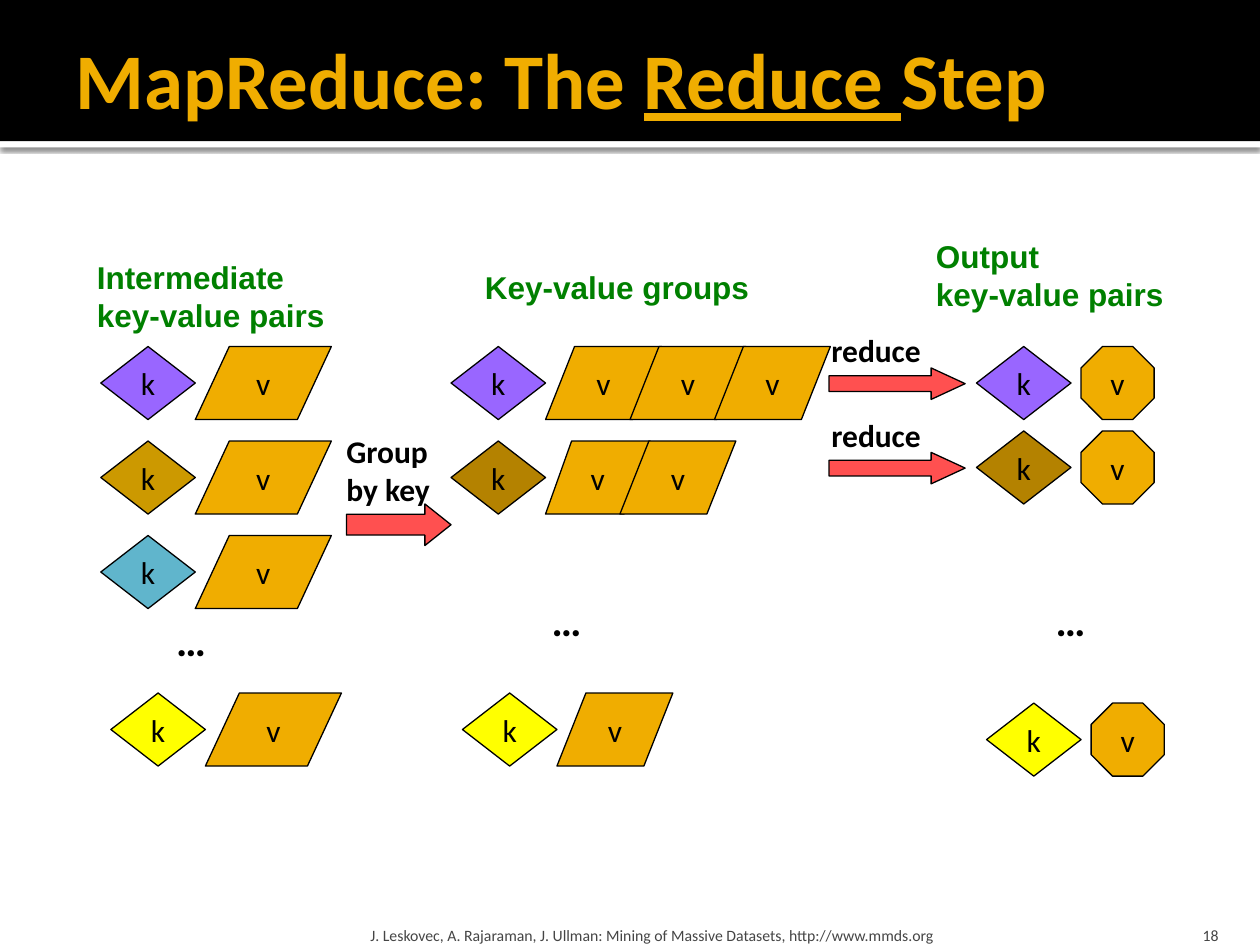
from dataclasses import dataclass

from lxml import etree
from pptx import Presentation
from pptx.dml.color import RGBColor
from pptx.enum.shapes import MSO_SHAPE as SHAPE
from pptx.enum.text import MSO_ANCHOR as ANCHOR, MSO_AUTO_SIZE as AUTO, PP_ALIGN as ALIGN
from pptx.oxml.ns import qn
from pptx.util import Inches, Pt


@dataclass(frozen=True)
class Theme:
    black: str = "000000"
    white: str = "FFFFFF"
    gold: str = "F0AD00"
    green: str = "008000"
    red: str = "FF5050"
    grey: str = "454545"
    purple: str = "9966FF"
    ochre: str = "CC9900"
    brown: str = "B48200"
    blue: str = "60B5CC"
    yellow: str = "FFFF00"
    body: str = "Calibri"
    heading: str = "Arial"
    title_size: float = 45
    text_size: float = 18
    dots_size: float = 24
    footer_size: float = 9


T = Theme()
KEY_W, SHAPE_H = 0.75, 0.58
SLANT = 0.25  # slant or arrowhead length as a share of the shape's width
LABEL = dict(size=T.text_size, name=T.body, color=T.black, bold=True)
HEADING = dict(LABEL, name=T.heading, color=T.green)
DOTS = dict(LABEL, size=T.dots_size)
LETTER = dict(LABEL, bold=False)
FOOTER = dict(LETTER, size=T.footer_size, color=T.grey)
TITLE = dict(LABEL, size=T.title_size, color=T.gold)


def add_run(p, text, size, color, **font):
    r = p.add_run()
    r.text = text
    r.font.size = Pt(size)
    r.font.color.rgb = RGBColor.from_string(color)
    for name, value in font.items():
        setattr(r.font, name, value)


def set_frame(tf, insets=(0.1, 0.05, 0.1, 0.05), **formats):
    for side, inset in zip(("left", "top", "right", "bottom"), insets):
        setattr(tf, f"margin_{side}", Inches(inset))
    for name, value in formats.items():
        setattr(tf, name, value)


def add_text(s, box, lines, font, align=ALIGN.LEFT, **frame):
    tf = s.shapes.add_textbox(*map(Inches, box)).text_frame
    set_frame(tf, **{"word_wrap": False, "auto_size": AUTO.SHAPE_TO_FIT_TEXT, **frame})
    for i, line in enumerate(lines):
        p = tf.paragraphs[0] if i == 0 else tf.add_paragraph()
        p.alignment = align
        add_run(p, line, **font)


def add_figure(s, kind, box, fill, letter=None, outlined=True):
    sp = s.shapes.add_shape(kind, *map(Inches, box))
    sp.shadow.inherit = False
    sp.fill.solid()
    sp.fill.fore_color.rgb = RGBColor.from_string(fill)
    if outlined:
        sp.line.color.rgb = RGBColor.from_string(T.black)
        sp.line.width = Pt(0.75)
    else:
        sp.line.fill.background()
    if letter:
        set_frame(sp.text_frame, word_wrap=False, vertical_anchor=ANCHOR.MIDDLE)
        p = sp.text_frame.paragraphs[0]
        p.alignment = ALIGN.CENTER
        add_run(p, letter, **LETTER)
    return sp


def add_arrow(s, box):
    sp = add_figure(s, SHAPE.RIGHT_ARROW, box, T.red)
    sp.adjustments[0] = 0.5
    sp.adjustments[1] = SLANT * box[2] / box[3]


def add_key(s, x, y, fill):
    add_figure(s, SHAPE.DIAMOND, (x, y, KEY_W, SHAPE_H), fill, "k")


def key_with_values(s, x, y, fill, values):
    """A key followed by parallelograms, each given as (offset, width)."""
    add_key(s, x, y, fill)
    for dx, w in values:
        sp = add_figure(s, SHAPE.PARALLELOGRAM, (x + KEY_W + dx, y, w, SHAPE_H), T.gold, "v")
        sp.adjustments[0] = SLANT * w / SHAPE_H


def key_with_output(s, x, y, fill):
    add_key(s, x, y, fill)
    sp = add_figure(s, SHAPE.OCTAGON, (x + 0.83, y, SHAPE_H, SHAPE_H), T.gold, "v")
    sp.adjustments[0] = 0.293


def add_shadow(sp):
    effects = sp.element.spPr.find(qn("a:effectLst"))
    shadow = etree.SubElement(effects, qn("a:outerShdw"), blurRad=str(Pt(2.5)),
                              dist=str(Pt(0.8)), dir="5400000", algn="tl", rotWithShape="0")
    color = etree.SubElement(shadow, qn("a:srgbClr"), val=T.black)
    etree.SubElement(color, qn("a:alpha"), val="60000")


def title_band(s, x, y, w, h):
    title = s.shapes.title
    stripe = add_figure(s, SHAPE.RECTANGLE, (x, y + h, w, 0.05), T.white, outlined=False)
    add_shadow(stripe)
    band = add_figure(s, SHAPE.RECTANGLE, (x, y, w, h), T.black, outlined=False)
    for sp in (stripe, band):
        title.element.addprevious(sp.element)
    box = (x + 0.5, y + 0.08, w - 1, 1.08)
    for name, value in zip(("left", "top", "width", "height"), box):
        setattr(title, name, Inches(value))
    set_frame(title.text_frame, (0.1, 0.05, 0.05, 0.05), word_wrap=True,
              auto_size=AUTO.NONE, vertical_anchor=ANCHOR.MIDDLE)
    p = title.text_frame.paragraphs[0]
    p.alignment = ALIGN.LEFT
    for text, underline in (("MapReduce: The ", False), ("Reduce ", True), ("Step", False)):
        add_run(p, text, underline=underline, **TITLE)


def intermediate_pairs(s, x, y):
    add_text(s, (x - 0.13, y - 0.75, 2.02, 0.71), ["Intermediate", "key-value pairs"], HEADING)
    pair = [(0, 1.08)]
    for i, fill in enumerate((T.purple, T.ochre, T.blue)):
        key_with_values(s, x, y + 0.75 * i, fill, pair)
    add_text(s, (x + 0.5, y + 2.08, 0.55, 0.5), ["…"], DOTS)
    key_with_values(s, x + 0.08, y + 2.75, T.yellow, pair)


def key_value_groups(s, x, y):
    add_text(s, (x + 0.17, y - 0.67, 2.58, 0.4), ["Key-value groups"], HEADING, word_wrap=True)
    key_with_values(s, x, y, T.purple, [(0.67 * i, 0.92) for i in range(3)])
    key_with_values(s, x, y + 0.75, T.brown, [(0, 0.83), (0.59, 0.92)])
    add_text(s, (x + 0.7, y + 1.92, 0.55, 0.5), ["…"], DOTS)
    key_with_values(s, x + 0.09, y + 2.75, T.yellow, [(0, 0.92)])


def output_pairs(s, x, y):
    add_text(s, (x - 0.42, y - 0.92, 2.25, 0.7), ["Output", "key-value pairs"], HEADING,
             word_wrap=True)
    for i, fill in enumerate((T.purple, T.brown)):
        key_with_output(s, x, y + 0.67 * i, fill)
    add_text(s, (x + 0.53, y + 1.92, 0.55, 0.5), ["…"], DOTS)
    key_with_output(s, x + 0.08, y + 2.83, T.yellow)


def group_step(s, x, y):
    add_arrow(s, (x, y, 0.83, 0.33))
    add_text(s, (x - 0.1, y - 0.62, 0.91, 0.71), ["Group", "by key"], LABEL)


def reduce_steps(s, x, y):
    for top in (y, y + 0.67):
        add_arrow(s, (x, top, 1.08, 0.25))
        add_text(s, (x - 0.08, top - 0.34, 0.94, 0.4), ["reduce"], LABEL)


def footer(s, x, y, h):
    frame = dict(word_wrap=True, auto_size=AUTO.NONE, vertical_anchor=ANCHOR.BOTTOM)
    source = ("J. Leskovec, A. Rajaraman, J. Ullman: "
              "Mining of Massive Datasets, http://www.mmds.org")
    add_text(s, (x, y, 6.02, h), [source], FOOTER, insets=(0.05, 0.05, 0.05, 0), **frame)
    add_text(s, (x + 6.08, y, 0.8, h), ["18"], FOOTER, ALIGN.RIGHT,
             insets=(0.1, 0.05, 0.1, 0), **frame)


def main():
    prs = Presentation()
    prs.slide_width, prs.slide_height = Inches(10), Inches(7.5)
    s = prs.slides.add_slide(prs.slide_layouts.get_by_name("Title Only"))
    title_band(s, 0, 0, 10, 1.12)
    intermediate_pairs(s, 0.8, 2.75)
    group_step(s, 2.75, 4)
    reduce_steps(s, 6.58, 2.92)
    output_pairs(s, 7.75, 2.75)
    key_value_groups(s, 3.58, 2.75)
    footer(s, 2.89, 7.2, 0.3)
    prs.save("out.pptx")


if __name__ == "__main__":
    main()
